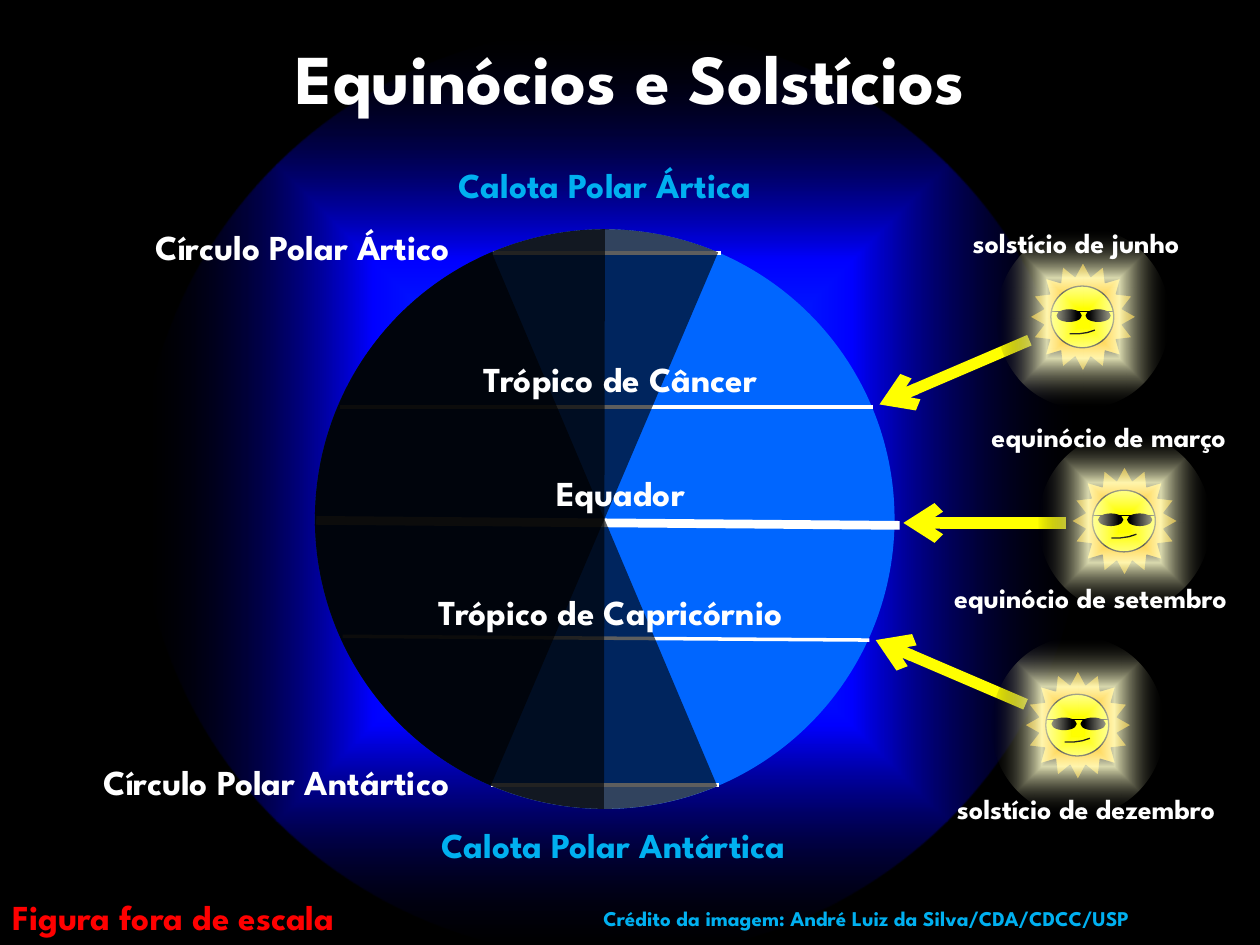
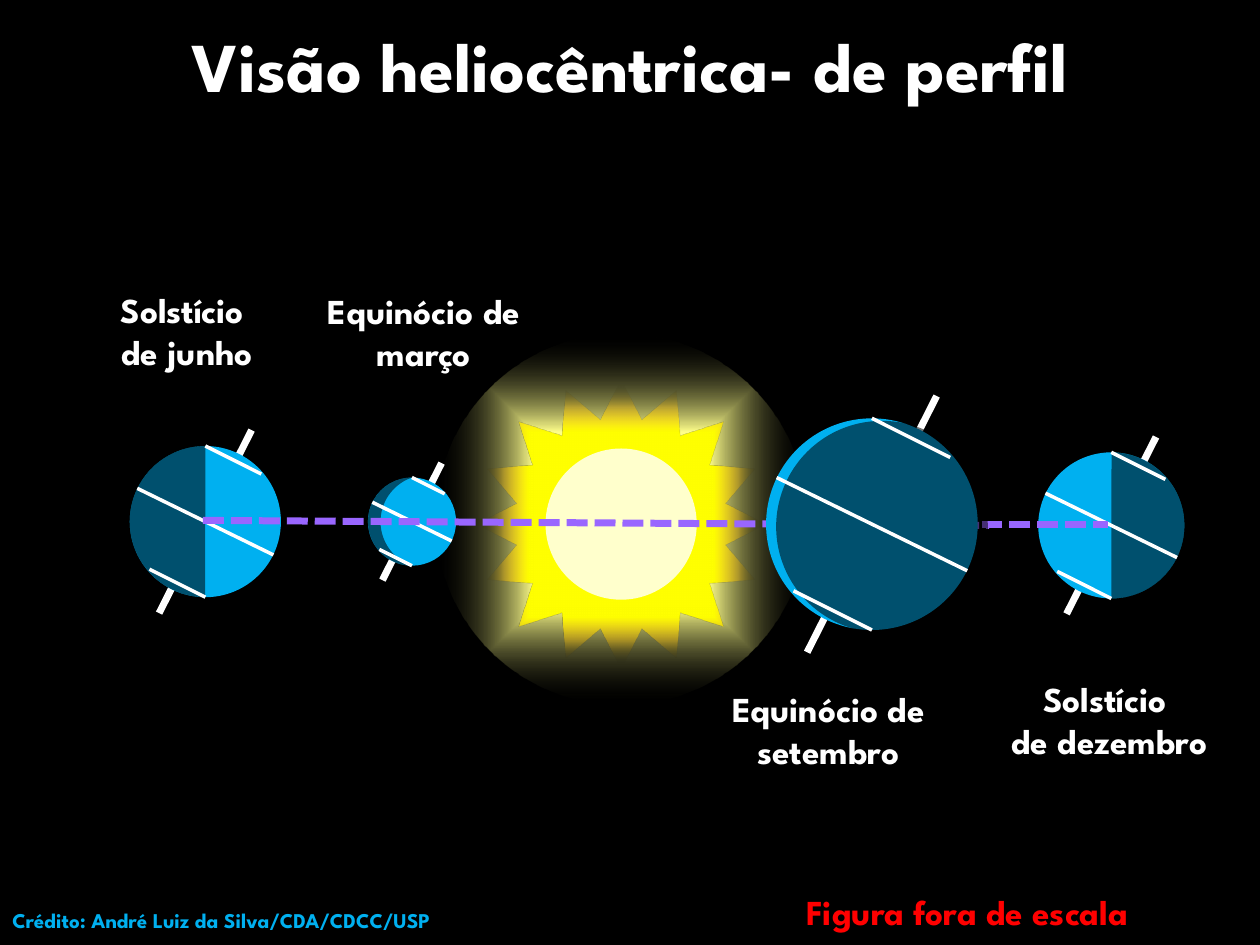
from lxml.etree import SubElement
from pptx import Presentation
from pptx.dml.color import RGBColor
from pptx.enum.dml import MSO_LINE
from pptx.enum.shapes import MSO_CONNECTOR, MSO_SHAPE as SHAPE
from pptx.enum.text import MSO_ANCHOR, MSO_AUTO_SIZE, PP_ALIGN
from pptx.oxml import parse_xml
from pptx.oxml.ns import nsdecls, qn
from pptx.util import Inches, Pt

COLS, ROWS = 10, 7.5
CELL = Inches(1)  # the slide is a grid of square cells, 10 by 7.5
FONT = "League Spartan"

BLACK = RGBColor(0x00, 0x00, 0x00)
WHITE = RGBColor(0xFF, 0xFF, 0xFF)
RED = RGBColor(0xFF, 0x00, 0x00)
SKY = RGBColor(0x00, 0xB0, 0xF0)
OCEAN = RGBColor(0x00, 0x66, 0xFF)
BLUE = RGBColor(0x00, 0x00, 0xFF)
YELLOW = RGBColor(0xFF, 0xFF, 0x00)
LEMON = RGBColor(0xFF, 0xFF, 0x8B)
CREAM = RGBColor(0xFF, 0xFF, 0xCC)
AMBER = RGBColor(0xFF, 0xC0, 0x00)
PURPLE = RGBColor(0x99, 0x66, 0xFF)

# Gradient stops: position, colour, opacity (all but the colour in percent)
SKY_GLOW = [(0, OCEAN, 100), (50, BLUE, 100), (100, BLACK, 5)]
SMALL_SUN_GLOW = [(7, WHITE, 0), (42, CREAM, 85), (100, BLACK, 2)]
BIG_SUN_GLOW = [(0, YELLOW, 100), (47, LEMON, 100), (100, BLACK, 2)]
BIG_SUN_RAYS = [(64, YELLOW, 100), (81, AMBER, 36), (96, BLACK, 0)]

LEFT_HALF = (54.09, 162.02)
POLAR_CAP = (40.35, 67.78)


def cells(*values):
    return [int(v * CELL) for v in values]


def add_alpha(color, percent):
    SubElement(color, qn("a:alpha")).set("val", str(percent * 1000))


def fill_gradient(s, stops):
    grad = parse_xml(
        f'<a:gradFill {nsdecls("a")} rotWithShape="1"><a:gsLst/>'
        '<a:path path="shape"><a:fillToRect l="50000" t="50000" r="50000" b="50000"/>'
        "</a:path></a:gradFill>")
    for pos, color, opacity in stops:
        gs = SubElement(grad[0], qn("a:gs"), pos=str(pos * 1000))
        clr = SubElement(gs, qn("a:srgbClr"), val=str(color))
        if opacity < 100:
            add_alpha(clr, opacity)
    s._element.spPr.find(qn("a:prstGeom")).addnext(grad)


def set_outline(s, outline):
    if outline is None:
        s.line.fill.background()
    else:
        s.line.color.rgb = outline
        s.line.width = Pt(0.75)


def add_figure(shapes, kind, box, fill, opacity=100, outline=None, adj=(), rotation=0):
    """Add a preset shape; fill is a colour or a list of gradient stops."""
    s = shapes.add_shape(kind, *cells(*box))
    s.shadow.inherit = False
    s.rotation = rotation
    for i, value in enumerate(adj):
        s.adjustments[i] = value
    if isinstance(fill, list):
        fill_gradient(s, fill)
    else:
        s.fill.solid()
        s.fill.fore_color.rgb = fill
        if opacity < 100:
            add_alpha(s._element.spPr.find(".//" + qn("a:srgbClr")), opacity)
    set_outline(s, outline)
    return s


def add_line(shapes, start, end, color=WHITE, width=2, dash=None, arrow=False):
    c = shapes.add_connector(MSO_CONNECTOR.STRAIGHT, *cells(*start, *end))
    c.line.color.rgb = color
    c.line.width = Pt(width)
    if dash:
        c.line.dash_style = dash
    if arrow:
        SubElement(c.line._get_or_add_ln(), qn("a:tailEnd"), type="arrow")
    SubElement(c._element.spPr, qn("a:effectLst"))


def write(p, text, size, color, align):
    p.alignment = align
    r = p.add_run()
    r.text = text
    r.font.name, r.font.size, r.font.bold = FONT, Pt(size), True
    r.font.color.rgb = color


def add_label(shapes, box, text, size=20, color=WHITE, align=PP_ALIGN.CENTER):
    tf = shapes.add_textbox(*cells(*box)).text_frame
    tf.word_wrap = True
    tf.auto_size = MSO_AUTO_SIZE.SHAPE_TO_FIT_TEXT
    for i, line in enumerate(text.split("\n")):
        p = tf.add_paragraph() if i else tf.paragraphs[0]
        write(p, line, size, color, align)


def add_footers(shapes, credit, credit_box, scale_box):
    add_label(shapes, credit_box, credit, 12, SKY, PP_ALIGN.LEFT)
    add_label(shapes, scale_box, "Figura fora de escala", 20, RED, PP_ALIGN.LEFT)


def add_title(slide, text, box):
    """Fill the title placeholder and bring it in front of the drawing."""
    title = slide.shapes.title
    title.left, title.top, title.width, title.height = cells(*box)
    tf = title.text_frame
    tf.word_wrap = True
    tf.auto_size = MSO_AUTO_SIZE.NONE
    tf.vertical_anchor = MSO_ANCHOR.MIDDLE
    write(tf.paragraphs[0], text, 40, WHITE, PP_ALIGN.CENTER)
    title._element.getparent().append(title._element)


def add_smiling_sun(shapes, x, y):
    """Add a small sun with sunglasses; x and y are the corner of its rays."""
    g = shapes.add_group_shape().shapes
    add_figure(g, SHAPE.STAR_16_POINT, (x, y, 0.85, 0.87), AMBER, outline=BLACK, adj=[0.375])
    add_figure(g, SHAPE.OVAL, (x + 0.17, y + 0.19, 0.5, 0.49), YELLOW, outline=BLACK)
    mouth = [(0.32, 0.57), (0.39, 0.57), (0.46, 0.56), (0.52, 0.54)]
    points = [cells(x + dx, y + dy) for dx, dy in mouth]
    fb = g.build_freeform(*points[0])
    fb.add_line_segments(points[1:], close=False)
    s = fb.convert_to_shape()
    s.shadow.inherit = False
    s.fill.background()
    set_outline(s, BLACK)
    for dx in (0.22, 0.45):
        add_figure(g, SHAPE.OVAL, (x + dx, y + 0.38, 0.19, 0.09), BLACK, outline=BLACK)
    add_line(g, (x + 0.17, y + 0.39), (x + 0.67, y + 0.39), BLACK, 0.75)
    add_figure(g, SHAPE.OVAL, (x - 0.26, y - 0.27, 1.37, 1.43), SMALL_SUN_GLOW)


def add_big_sun(shapes, cx, cy):
    g = shapes.add_group_shape().shapes
    for kind, size, fill, adj in [(SHAPE.OVAL, 2.94, BIG_SUN_GLOW, ()),
                                  (SHAPE.STAR_16_POINT, 2.29, BIG_SUN_RAYS, [0.367]),
                                  (SHAPE.OVAL, 1.2, CREAM, ())]:
        dy = 0.04 if size < 2.9 else 0
        add_figure(g, kind, (cx - size / 2, cy + dy - size / 2, size, size), fill, adj=adj)


def add_planet(shapes, cx, cy, radius, night, reach=1.36, shift=(0, 0), share=1,
               adj=(), rotation=0):
    """Add a tilted Earth; night is the shape that shades its dark side."""
    g = shapes.add_group_shape().shapes

    def at(dx, dy):
        return cx + dx * radius, cy + dy * radius

    add_line(g, at(-0.45 * reach, 0.89 * reach), at(0.45 * reach, -0.89 * reach), width=4)
    x, y, size = cx - radius, cy - radius, 2 * radius
    add_figure(g, SHAPE.OVAL, (x, y, size, size), SKY)
    add_figure(g, night, (x + shift[0], y + shift[1], size * share, size), BLACK, 54,
               adj=adj, rotation=rotation)
    for start, end in [((0, -1), (0.74, -0.63)), ((-0.74, 0.63), (0, 1)),
                       ((-0.9, -0.44), (0.9, 0.44))]:
        add_line(g, at(*start), at(*end))


def build_seasons(slide):
    sh = slide.shapes
    globe = (2.5, 1.82, 4.6, 4.6)
    add_figure(sh, SHAPE.OVAL, (1.11, 0.22, 7.5, 7.39), SKY_GLOW)
    add_figure(sh, SHAPE.OVAL, globe, OCEAN)

    add_line(sh, (2.51, 4.13), (7.14, 4.17), width=5)
    for start, end in [((2.7, 3.23), (6.93, 3.23)), ((2.72, 5.05), (6.9, 5.08)),
                       ((3.91, 2.01), (5.72, 2.01)), ((3.9, 6.23), (5.71, 6.23))]:
        add_line(sh, start, end)
    for rotation in (0, 180):
        add_figure(sh, SHAPE.CHORD, globe, WHITE, 53, adj=POLAR_CAP, rotation=rotation)

    for start, end in [((8.46, 4.15), (7.17, 4.15)), ((8.17, 2.7), (6.98, 3.21)),
                       ((8.14, 5.59), (6.95, 5.08))]:
        add_line(sh, start, end, YELLOW, 6.5, arrow=True)
    for x, y in [(8.17, 2.08), (8.5, 3.7), (8.13, 5.32)]:
        add_smiling_sun(sh, x, y)
    for rotation in (0, -23, 23):
        add_figure(sh, SHAPE.CHORD, globe, BLACK, 63, adj=LEFT_HALF, rotation=rotation)

    for x, y, text in [(0.12, 1.74, "Círculo Polar Ártico"),
                       (-0.09, 5.99, "Círculo Polar Antártico"),
                       (2.64, 2.79, "Trópico de Câncer"),
                       (2.64, 3.69, "Equador"),
                       (2.56, 4.64, "Trópico de Capricórnio")]:
        add_label(sh, (x, y, 4.57, 0.44), text)
    add_label(sh, (3.03, 1.25, 3.54, 0.44), "Calota Polar Ártica", color=SKY)
    add_label(sh, (3.1, 6.49, 3.54, 0.44), "Calota Polar Antártica", color=SKY)
    for x, y, width, text in [(7.2, 1.74, 2.68, "solstício de junho"),
                              (7.56, 3.28, 2.48, "equinócio de março"),
                              (7.27, 4.56, 2.77, "equinócio de setembro"),
                              (7.28, 6.23, 2.68, "solstício de dezembro")]:
        add_label(sh, (x, y, width, 0.37), text, 16)
    add_footers(sh, "Crédito da imagem: André Luiz da Silva/CDA/CDCC/USP",
                (4.69, 7.14, 5.28, 0.3), (0, 7.06, 3.54, 0.44))
    add_title(slide, "Equinócios e Solstícios", (0, -0.02, COLS, 1.25))


def build_heliocentric_view(slide):
    sh = slide.shapes
    add_big_sun(sh, 4.93, 4.12)
    for x, y, width, text in [(0.6, 2.24, 1.77, "Solstício \nde junho"),
                              (2.48, 2.25, 1.77, "Equinócio de março"),
                              (5.53, 5.41, 2.09, "Equinócio de setembro"),
                              (7.76, 5.33, 2.09, "Solstício \nde dezembro")]:
        add_label(sh, (x, y, width, 0.77), text)

    add_planet(sh, 1.63, 4.14, 0.6, SHAPE.CHORD, adj=LEFT_HALF)
    add_planet(sh, 3.27, 4.14, 0.35, SHAPE.MOON, reach=1.49, share=0.5, adj=[0.285])
    add_planet(sh, 8.82, 4.17, 0.58, SHAPE.CHORD, adj=LEFT_HALF, rotation=180)
    for start, end in [((7.79, 4.16), (8.79, 4.16)), ((1.61, 4.13), (7.85, 4.17))]:
        add_line(sh, start, end, PURPLE, 4, MSO_LINE.SQUARE_DOT)
    add_planet(sh, 6.92, 4.16, 0.84, SHAPE.OVAL, shift=(0.08, 0.02))

    add_footers(sh, "Crédito: André Luiz da Silva/CDA/CDCC/USP",
                (0, 7.15, COLS, 0.3), (6.3, 7.02, 3.54, 0.44))
    add_title(slide, "Visão heliocêntrica- de perfil", (0.75, 0.14, 8.5, 0.75))


def main():
    prs = Presentation()
    prs.slide_width, prs.slide_height = cells(COLS, ROWS)
    background = prs.slide_master.background.fill
    background.solid()
    background.fore_color.rgb = BLACK
    title_only = prs.slide_layouts[5]
    for build in (build_seasons, build_heliocentric_view):
        build(prs.slides.add_slide(title_only))
    prs.save("out.pptx")


if __name__ == "__main__":
    main()
